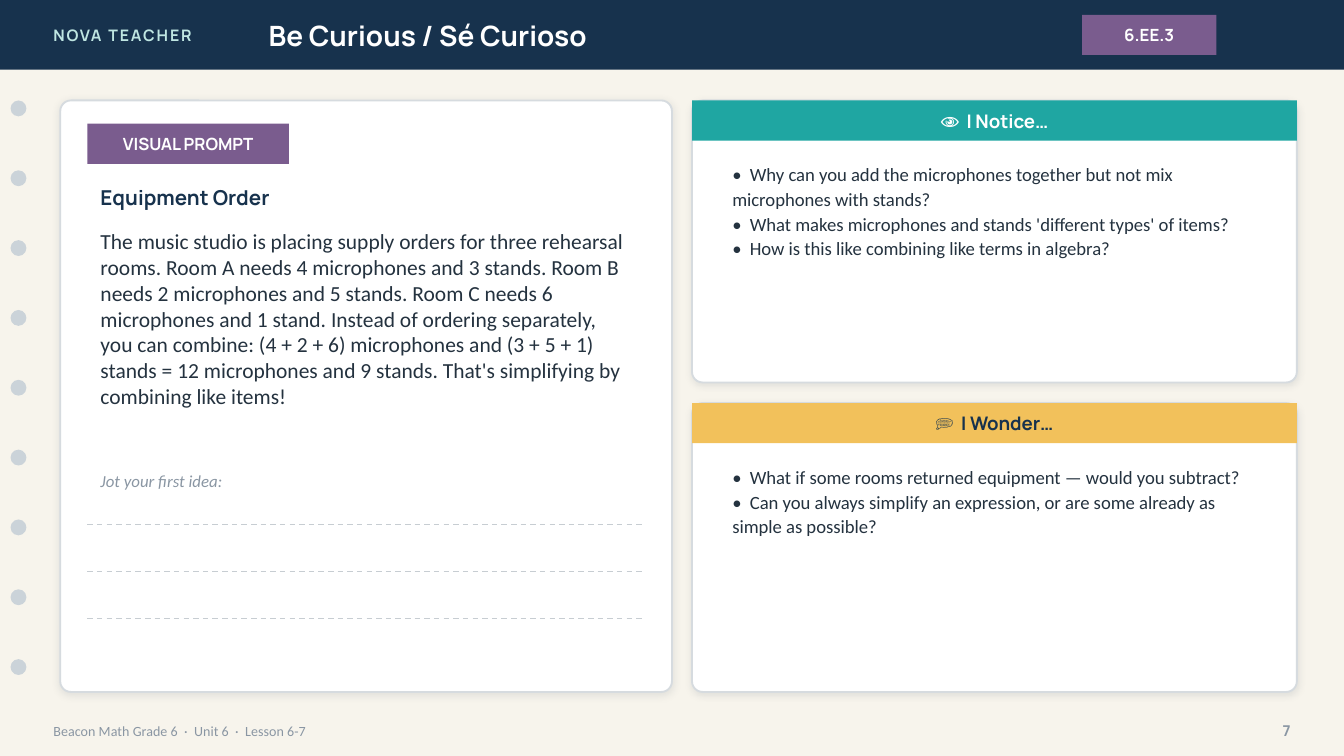
from lxml.etree import SubElement
from pptx import Presentation
from pptx.dml.color import RGBColor
from pptx.enum.dml import MSO_LINE
from pptx.enum.shapes import MSO_CONNECTOR, MSO_SHAPE
from pptx.enum.text import MSO_ANCHOR, PP_ALIGN
from pptx.oxml.ns import qn
from pptx.util import Cm, Pt

NAVY, PURPLE, TEAL, GOLD = "17324D", "7A5C8E", "1FA6A2", "F2C15B"
WHITE, CREAM, MINT, INK = "FFFFFF", "F7F4EC", "BFE6E2", "24323F"
MUTED, DOT, RULE, BORDER, SHADOW = "8A96A3", "CBD3D9", "C7CDD2", "D6DBDF", "1C2E42"
HEAD, BODY = "Manrope", "Calibri"
LEFT, CENTER, RIGHT = PP_ALIGN.LEFT, PP_ALIGN.CENTER, PP_ALIGN.RIGHT

PROMPT = (
    "The music studio is placing supply orders for three rehearsal rooms. "
    "Room A needs 4 microphones and 3 stands. Room B needs 2 microphones and 5 stands. "
    "Room C needs 6 microphones and 1 stand. Instead of ordering separately, "
    "you can combine: (4 + 2 + 6) microphones and (3 + 5 + 1) stands = "
    "12 microphones and 9 stands. That's simplifying by combining like items!"
)
NOTICE = [
    "Why can you add the microphones together but not mix microphones with stands?",
    "What makes microphones and stands 'different types' of items?",
    "How is this like combining like terms in algebra?",
]
WONDER = [
    "What if some rooms returned equipment — would you subtract?",
    "Can you always simplify an expression, or are some already as simple as possible?",
]


def rgb(value):
    """Turn a hex string into a colour."""
    return RGBColor.from_string(value)


class LessonSlide:
    """Hold the lesson style and the current slide."""

    def __init__(self, prs):
        """Add a blank slide with the cream background."""
        self.s = prs.slides.add_slide(prs.slide_layouts[6])
        self.s.background.fill.solid()
        self.s.background.fill.fore_color.rgb = rgb(CREAM)

    def add_lines(self, sp, lines, size, color, font=HEAD, bold=False, italic=False,
                  align=LEFT, anchor=MSO_ANCHOR.MIDDLE, leading=None, spacing=None):
        """Fill a shape with one styled run per paragraph."""
        tf = sp.text_frame
        tf.word_wrap = True
        tf.vertical_anchor = anchor
        for i, line in enumerate(lines):
            p = tf.paragraphs[0] if i == 0 else tf.add_paragraph()
            p.alignment = align
            if leading:
                p.line_spacing = leading
            r = p.add_run()
            r.text = line
            r.font.name, r.font.size = font, Pt(size)
            r.font.bold, r.font.italic = bold, italic
            r.font.color.rgb = rgb(color)
            if spacing:
                r.font._element.set("spc", str(spacing))

    def text(self, x, y, w, h, lines, size, color, **style):
        """Add a text box."""
        sp = self.s.shapes.add_textbox(Cm(x), Cm(y), Cm(w), Cm(h))
        self.add_lines(sp, lines, size, color, **style)

    def shape(self, x, y, w, h, fill, kind=MSO_SHAPE.RECTANGLE):
        """Add a flat filled shape."""
        sp = self.s.shapes.add_shape(kind, Cm(x), Cm(y), Cm(w), Cm(h))
        sp.shadow.inherit = False
        sp.fill.solid()
        sp.fill.fore_color.rgb = rgb(fill)
        sp.line.fill.background()
        return sp

    def label(self, x, y, w, caption, size, fill, color=WHITE):
        """Add a coloured bar with a centred caption."""
        sp = self.shape(x, y, w, 0.76, fill)
        self.add_lines(sp, [caption], size, color, bold=True, align=CENTER)

    def card(self, x, y, w, h):
        """Add a white rounded card with a soft shadow."""
        sp = self.shape(x, y, w, h, WHITE, MSO_SHAPE.ROUNDED_RECTANGLE)
        sp.adjustments[0] = 0.2 / min(w, h)
        sp.line.color.rgb = rgb(BORDER)
        sp.line.width = Pt(1)
        effects = sp._element.spPr.find(qn("a:effectLst"))
        shadow = SubElement(effects, qn("a:outerShdw"), blurRad=str(Pt(4)), dist=str(Pt(1)),
                            dir="5400000", algn="bl", rotWithShape="0")
        tint = SubElement(shadow, qn("a:srgbClr"), val=SHADOW)
        SubElement(tint, qn("a:alpha"), val="10000")

    def rule(self, x1, x2, y):
        """Add a dashed writing line."""
        line = self.s.shapes.add_connector(MSO_CONNECTOR.STRAIGHT, Cm(x1), Cm(y), Cm(x2), Cm(y))
        line.line.color.rgb = rgb(RULE)
        line.line.width = Pt(0.75)
        line.line.dash_style = MSO_LINE.DASH
        SubElement(line._element.spPr, qn("a:effectLst"))

    def panel(self, y, h, title, fill, color, questions):
        """Add a right-hand card with a title bar and questions."""
        x, w = 13.08, 11.43
        self.card(x, y, w, h)
        self.label(x, y, w, title, 10, fill, color)
        self.text(x + 0.51, y + 1.02, w - 1.02, h - 1.27, [f"•  {q}" for q in questions],
                  10, INK, font=BODY, anchor=MSO_ANCHOR.TOP, leading=1.1)


def main():
    """Build the lesson slide and save it."""
    prs = Presentation()
    prs.slide_width, prs.slide_height = Cm(25.4), Cm(14.29)
    s = LessonSlide(prs)

    s.shape(0, 0, 25.4, 1.32, NAVY)
    s.text(0.76, 0, 6.1, 1.32, ["NOVA TEACHER"], 8.5, MINT, bold=True, spacing=100)
    s.text(4.83, 0, 14.22, 1.32, ["Be Curious / Sé Curioso"], 15, WHITE, bold=True)
    s.label(20.45, 0.28, 2.54, "6.EE.3", 9, PURPLE)

    for i in range(9):
        s.shape(0.2, 1.9 + 1.32 * i, 0.3, 0.3, DOT, MSO_SHAPE.OVAL)

    s.text(0.76, 13.46, 17.78, 0.71, ["Beacon Math Grade 6  ·  Unit 6  ·  Lesson 6-7"],
           7.5, MUTED, font=BODY)
    s.text(23.37, 13.46, 1.27, 0.71, ["7"], 8, MUTED, bold=True, align=RIGHT)

    s.card(1.14, 1.9, 11.56, 11.18)
    s.label(1.65, 2.34, 3.81, "VISUAL PROMPT", 9, PURPLE)
    s.text(1.65, 3.35, 10.54, 0.76, ["Equipment Order"], 11, NAVY, bold=True)
    s.text(1.65, 4.19, 10.54, 4.32, [PROMPT], 11.5, INK, font=BODY, anchor=MSO_ANCHOR.TOP)
    s.text(1.65, 8.76, 10.16, 0.64, ["Jot your first idea:"], 9, MUTED, font=BODY, italic=True)
    for i in range(3):
        s.rule(1.65, 12.19, 9.91 + 0.89 * i)

    s.panel(1.9, 5.33, "👁  I Notice…", TEAL, WHITE, NOTICE)
    s.panel(7.62, 5.46, "💭  I Wonder…", GOLD, NAVY, WONDER)

    prs.save("out.pptx")


if __name__ == "__main__":
    main()
